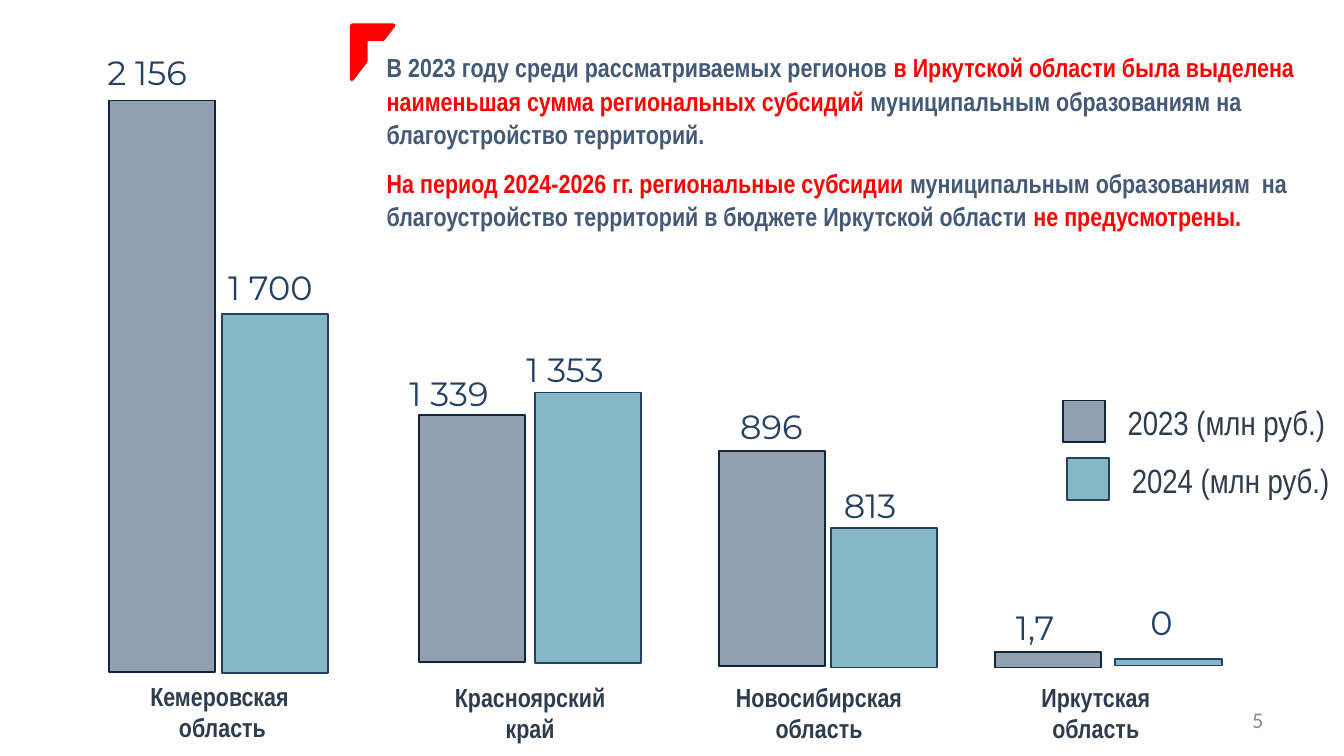
"""Builds the slide comparing regional subsidies for 2023 and 2024."""
import pptx
import pptx.util
import pptx.dml.color
import pptx.enum.shapes
import pptx.enum.text
import pptx.oxml
import pptx.oxml.ns

Cm, Pt = pptx.util.Cm, pptx.util.Pt
ALIGN = pptx.enum.text.PP_ALIGN
ANCHOR = pptx.enum.text.MSO_ANCHOR
SHAPES = pptx.enum.shapes.MSO_SHAPE

COLORS = {"navy": "254061", "dark": "0F243E", "teal": "31859C",
          "label": "2E3C4D", "body": "435976", "accent": "FF0000", "muted": "8C8C8C"}

YEARS = [
    {"fill": "navy", "opacity": 50, "line": "dark"},
    {"fill": "teal", "opacity": 59, "line": "navy"},
]

# region caption, (left, top, width), then per year: bar (left, top, height), value, (left, top, width)
REGIONS = [
    (["Кемеровская", " область"], (2.41, 12.73, 3.48), [
        ((2.06, 1.9, 10.8), "2 156", (1.78, 0.86, 3.02)),
        ((4.19, 5.94, 6.78), "1 700", (4.06, 4.93, 2.69))]),
    (["Красноярский край"], (8.28, 12.75, 3.48), [
        ((7.92, 7.85, 4.67), "1 339", (7.49, 6.93, 2.72)),
        ((10.11, 7.42, 5.11), "1 353", (9.7, 6.48, 3.12))]),
    (["Новосибирская область"], (13.51, 12.75, 3.94), [
        ((13.59, 8.53, 4.06), "896", (13.74, 7.54, 1.98)),
        ((15.7, 9.98, 2.64), "813", (15.7, 9.04, 2.01))]),
    (["Иркутская область"], (18.97, 12.75, 3.48), [
        ((18.8, 12.32, 0.3), "1,7", (18.95, 11.35, 1.65)),
        ((21.08, 12.45, 0.13), "0", (21.49, 11.25, 1.65))]),
]

LEGEND = [("2023 (млн руб.)", 20.09, 7.57), ("2024 (млн руб.)", 20.17, 8.66)]

SUMMARY = [
    [("В 2023 году среди рассматриваемых регионов ", "body"),
     ("в Иркутской области была выделена наименьшая сумма региональных субсидий", "accent"),
     (" муниципальным образованиям на благоустройство территорий.", "body")],
    [("На период 2024-2026 гг. региональные субсидии ", "accent"),
     ("муниципальным образованиям  на благоустройство территорий"
      " в бюджете Иркутской области ", "body"),
     ("не предусмотрены.", "accent")],
]

BAR_WIDTH, SWATCH = 2.01, 0.79
VALUE_FONT = {"name": "Montserrat", "size": Pt(18)}
LEGEND_FONT = {"name": "Arial Narrow", "size": Pt(18)}
BOLD_FONT = {"name": "Arial Narrow", "size": Pt(14), "bold": True}
NUMBER_FONT = {"name": "Calibri", "size": Pt(12)}
SUMMARY_SPACING = {"line_spacing": 1.07, "space_after": Pt(8)}


def rgb(color):
    return pptx.dml.color.RGBColor.from_string(COLORS[color])


def set_all(target, values):
    for key, value in values.items():
        setattr(target, key, value)


def add_block(slide, kind, box, fill, line, opacity=100, weight=1):
    block = slide.shapes.add_shape(kind, *map(Cm, box))
    block.shadow.inherit = False
    block.fill.solid()
    block.fill.fore_color.rgb = rgb(fill)
    block.line.color.rgb = rgb(line)
    block.line.width = Pt(weight)
    if opacity < 100:
        tint = block.fill._xPr.find(".//" + pptx.oxml.ns.qn("a:srgbClr"))
        alpha = pptx.oxml.parse_xml(
            f'<a:alpha {pptx.oxml.ns.nsdecls("a")} val="{opacity * 1000}"/>')
        tint.append(alpha)


def add_text(slide, box, paragraphs, font, layout=None, anchor=ANCHOR.TOP):
    frame = slide.shapes.add_textbox(*map(Cm, box)).text_frame
    set_all(frame, {"word_wrap": True, "vertical_anchor": anchor})
    for index, pieces in enumerate(paragraphs):
        paragraph = frame.add_paragraph() if index else frame.paragraphs[0]
        set_all(paragraph, layout or {})
        for words, color in pieces:
            run = paragraph.add_run()
            run.text = words
            set_all(run.font, font)
            run.font.color.rgb = rgb(color)


def main():
    deck = pptx.Presentation()
    set_all(deck, {"slide_width": Cm(25.4), "slide_height": Cm(14.29)})
    slide = deck.slides.add_slide(deck.slide_layouts[6])

    for caption, caption_box, bars in REGIONS:
        for year, ((left, top, height), value, value_box) in zip(YEARS, bars):
            add_block(slide, SHAPES.RECTANGLE, (left, top, BAR_WIDTH, height), **year)
            add_text(slide, (*value_box, 1.02), [[(value, "navy")]], VALUE_FONT)
        add_text(slide, (*caption_box, 1.47), [[(words, "label")] for words in caption],
                 BOLD_FONT, {"alignment": ALIGN.CENTER})

    for year, (name, left, top) in zip(YEARS, LEGEND):
        add_block(slide, SHAPES.RECTANGLE, (left, top, SWATCH, SWATCH), **year)
        add_text(slide, (left + 0.97, top - 0.1, 8.99, 1.02), [[(name, "label")]], LEGEND_FONT)

    add_text(slide, (7.06, 0.36, 18.62, 4.6), SUMMARY, BOLD_FONT, SUMMARY_SPACING, ANCHOR.MIDDLE)
    add_text(slide, (18.21, 13.23, 5.92, 0.76), [[("5", "muted")]], NUMBER_FONT,
             {"alignment": ALIGN.RIGHT}, ANCHOR.MIDDLE)
    add_block(slide, SHAPES.HALF_FRAME, (6.65, 0.48, 0.79, 1.02), "accent", "accent", weight=2)

    deck.save("out.pptx")


if __name__ == "__main__":
    main()
